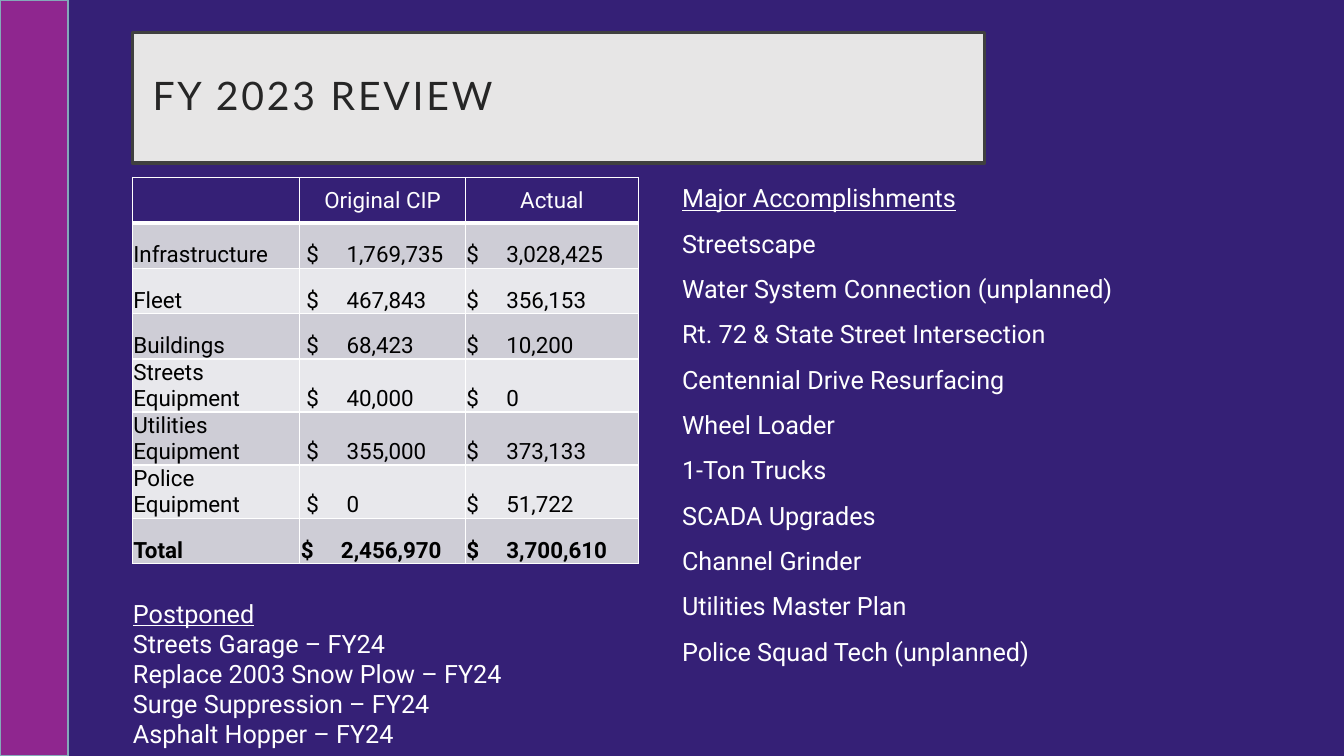
import pptx
import pptx.util
import pptx.dml.color
import pptx.enum.shapes
import pptx.enum.text
import pptx.oxml
import pptx.oxml.ns

Pt = pptx.util.Pt
RGB = pptx.dml.color.RGBColor
Align = pptx.enum.text.PP_ALIGN
Anchor = pptx.enum.text.MSO_ANCHOR

NAVY = RGB(0x35, 0x20, 0x76)
PURPLE = RGB(0x8F, 0x26, 0x8F)
TEAL = RGB(0x84, 0xA9, 0xB9)
PALE = RGB(0xE7, 0xE6, 0xE6)
GRAY = RGB(0x40, 0x40, 0x40)
INK = RGB(0x26, 0x26, 0x26)
WHITE = RGB(0xFF, 0xFF, 0xFF)
BLACK = RGB(0, 0, 0)
BANDS = [RGB(0xCE, 0xCD, 0xD6), RGB(0xE8, 0xE8, 0xEC)]

COSTS = [
    ("Infrastructure", "1,769,735", "3,028,425"),
    ("Fleet", "467,843", "356,153"),
    ("Buildings", "68,423", "10,200"),
    ("Streets Equipment", "40,000", "0"),
    ("Utilities Equipment", "355,000", "373,133"),
    ("Police Equipment", "0", "51,722"),
    ("Total", "2,456,970", "3,700,610"),
]
DONE = [
    "Major Accomplishments", "Streetscape",
    "Water System Connection (unplanned)",
    "Rt. 72 & State Street Intersection",
    "Centennial Drive Resurfacing", "Wheel Loader", "1-Ton Trucks",
    "SCADA Upgrades", "Channel Grinder", "Utilities Master Plan",
    "Police Squad Tech (unplanned)",
]
LATE = [
    "Postponed", "Streets Garage – FY24", "Replace 2003 Snow Plow – FY24",
    "Surge Suppression – FY24", "Asphalt Hopper – FY24",
]


def node(xml):
    return pptx.oxml.parse_xml(xml.replace(
        ">", " " + pptx.oxml.ns.nsdecls("a") + ">", 1))


class Deck:
    head, body = "Lato", "Roboto"

    def __init__(self, slide):
        self.slide = slide
        slide.background.fill.solid()
        slide.background.fill.fore_color.rgb = NAVY

    def place(self, shape, box):
        shape.left, shape.top, shape.width, shape.height = map(Pt, box)

    def paint(self, shape, fill, line, width):
        shape.fill.solid()
        shape.fill.fore_color.rgb = fill
        shape.line.color.rgb = line
        shape.line.width = Pt(width)

    def style(self, para, name, size, color):
        para.font.name = name
        para.font.size = Pt(size)
        para.font.color.rgb = color

    def bar(self, box, fill, line):
        shape = self.slide.shapes.add_shape(
            pptx.enum.shapes.MSO_SHAPE.RECTANGLE, *map(Pt, box))
        shape.shadow.inherit = False
        self.paint(shape, fill, line, 1)

    def title(self, text, box):
        shape = self.slide.shapes.title
        self.place(shape, box)
        self.paint(shape, PALE, GRAY, 2.5)
        frame = shape.text_frame
        frame.text = text
        frame.auto_size = pptx.enum.text.MSO_AUTO_SIZE.NONE
        frame.vertical_anchor = Anchor.MIDDLE
        frame.margin_left = frame.margin_right = Pt(14.4)
        frame.margin_top = frame.margin_bottom = Pt(14.4)
        para = frame.paragraphs[0]
        para.alignment = Align.LEFT
        para.line_spacing = 0.9
        self.style(para, self.head, 28, INK)
        para.runs[0]._r.get_or_add_rPr().set("spc", "200")

    def list(self, index, lines, box, space):
        """Fill a body placeholder: an underlined heading, then plain lines."""
        shape = self.slide.placeholders[index]
        self.place(shape, box)
        frame = shape.text_frame
        frame.text = "\n".join(lines)
        frame.auto_size = pptx.enum.text.MSO_AUTO_SIZE.NONE
        for i, para in enumerate(frame.paragraphs):
            props = para._p.get_or_add_pPr()
            props.set("marL", "0")
            props.set("indent", "0")
            props.append(node("<a:buNone></a:buNone>"))
            para.space_before = Pt(0)
            para.line_spacing = space if i else 1.0
            self.style(para, self.body, 18, WHITE)
            para.font.underline = i == 0

    def cell(self, cell, text, fill, color, edges):
        for side, width in zip("LRTB", edges):
            cell._tc.get_or_add_tcPr().append(node(
                f'<a:ln{side} w="{Pt(width)}"><a:solidFill>'
                f'<a:srgbClr val="{WHITE}"/></a:solidFill></a:ln{side}>'))
        cell.fill.solid()
        cell.fill.fore_color.rgb = fill
        cell.margin_left = cell.margin_right = cell.margin_top = Pt(0.7)
        cell.margin_bottom = Pt(0)
        cell.vertical_anchor = Anchor.BOTTOM
        cell.text = text
        para = cell.text_frame.paragraphs[0]
        if "\t" in text:
            para._p.get_or_add_pPr().append(node(
                f'<a:tabLst><a:tab pos="{Pt(28.7)}" algn="l"/></a:tabLst>'))
        self.style(para, self.body, 16, color)
        return para

    def table(self, heads, rows, spot, widths, height):
        count = len(rows) + 1
        grid = self.slide.shapes.add_table(
            count, len(heads), *map(Pt, spot),
            Pt(sum(widths)), Pt(height * count)).table
        grid.first_row = grid.horz_banding = False
        for col, width in zip(grid.columns, widths):
            col.width = Pt(width)
        for row in grid.rows:
            row.height = Pt(height)
        for c, text in enumerate(heads):
            para = self.cell(grid.cell(0, c), text, NAVY, WHITE, (1, 1, 1, 3))
            para.alignment = Align.CENTER
            grid.cell(0, c).vertical_anchor = Anchor.MIDDLE
        for r, (name, *sums) in enumerate(rows, 1):
            total = r == len(rows)
            edges = (1, 1, 3 if r == 1 else 1, 1)
            for c, text in enumerate([name] + ["$\t" + s for s in sums]):
                cell = grid.cell(r, c)
                para = self.cell(cell, text, BANDS[(r - 1) % 2], BLACK, edges)
                para.font.bold = total
                if c == 1 and not total:
                    cell.margin_left = Pt(4.7)


def main():
    show = pptx.Presentation()
    show.slide_width, show.slide_height = Pt(960), Pt(540)
    deck = Deck(show.slides.add_slide(show.slide_layouts[3]))
    deck.bar((0, 0, 48.5, 540), PURPLE, TEAL)
    deck.title("FY 2023 REVIEW", (94.6, 23.2, 608.6, 93.4))
    deck.table(["", "Original CIP", "Actual"], COSTS,
               (94.6, 126.8), (119.6, 118.2, 123.8), 32.4)
    deck.list(1, DONE, (480, 126.8, 362, 353), 1.5)
    deck.list(2, LATE, (87.8, 423.4, 392.4, 116.6), 1.0)
    show.save("out.pptx")


if __name__ == "__main__":
    main()
